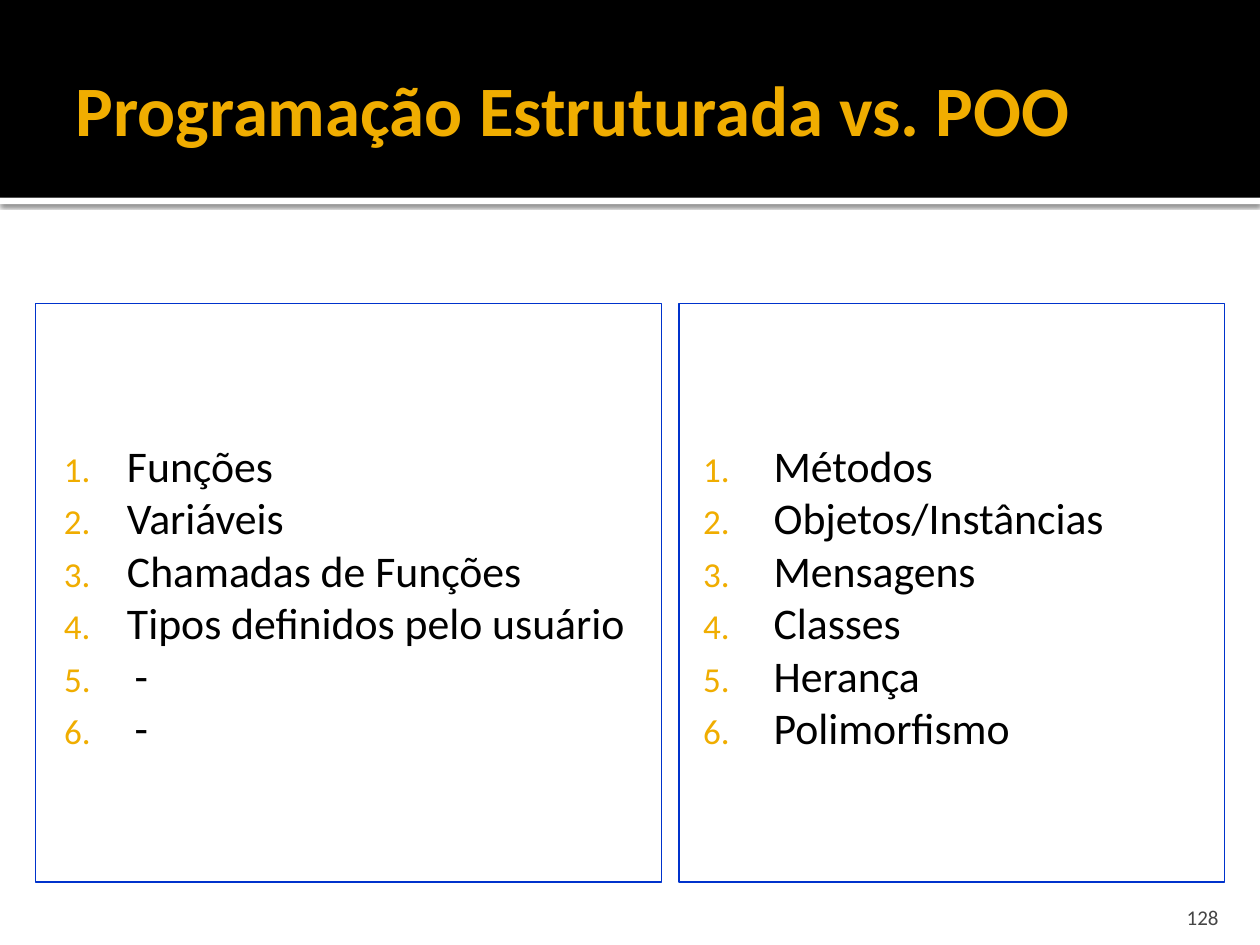
import pptx
import pptx.dml.color
import pptx.enum.shapes
import pptx.enum.text
import pptx.oxml
import pptx.oxml.ns
import pptx.util
from pptx.util import Inches

ALIGN = pptx.enum.text.PP_ALIGN
ANCHOR = pptx.enum.text.MSO_ANCHOR

THEME = {
    "font": "Calibri",
    "black": "000000", "white": "FFFFFF", "accent": "F0AD00",
    "border": "0033CC", "muted": "454545",
    "title_size": 40.5, "body_size": 25, "number_size": 12,
}

TITLE = "Programação Estruturada vs. POO"
PAGE_NUMBER = "128"

NARROW, WIDE = (0.63, 0.5), (0.69, 0.56)  # left margin, hanging indent
PANELS = [
    {"left": 0.28, "width": 4.97, "inset": 0.1, "items": [
        ("Funções", NARROW), ("Variáveis", NARROW),
        ("Chamadas de Funções", NARROW),
        ("Tipos definidos pelo usuário", NARROW),
        ("-", WIDE), ("-", WIDE)]},
    {"left": 5.39, "width": 4.33, "inset": 0.06, "items": [
        (name, WIDE) for name in (
            "Métodos", "Objetos/Instâncias", "Mensagens",
            "Classes", "Herança", "Polimorfismo")]},
]
PANEL_TOP, PANEL_HEIGHT = 2.41, 4.59
BAND_HEIGHT, STRIP_HEIGHT = 1.57, 0.05


def color(name):
    return pptx.dml.color.RGBColor.from_string(THEME[name])


def add_xml(parent, xml):
    namespaces = pptx.oxml.ns.nsdecls("a")
    parent.append(pptx.oxml.parse_xml(xml.replace(" NS", " " + namespaces, 1)))


def style_font(font, size, color_name, bold=False):
    font.name = THEME["font"]
    font.size = pptx.util.Pt(THEME[size])
    font.bold = bold
    font.color.rgb = color(color_name)


def set_frame(text_frame, anchor, insets):
    text_frame.word_wrap = True
    text_frame.auto_size = pptx.enum.text.MSO_AUTO_SIZE.NONE
    text_frame.vertical_anchor = anchor
    (text_frame.margin_left, text_frame.margin_top,
     text_frame.margin_right, text_frame.margin_bottom) = map(Inches, insets)


def add_rectangle(slide, left, top, width, height):
    shape = slide.shapes.add_shape(
        pptx.enum.shapes.MSO_SHAPE.RECTANGLE,
        *map(Inches, (left, top, width, height)))
    shape.shadow.inherit = False
    return shape


def add_header(slide):
    for top, height, fill in ((BAND_HEIGHT, STRIP_HEIGHT, "white"),
                              (0, BAND_HEIGHT, "black")):
        band = add_rectangle(slide, 0, top, 10, height)
        band.fill.solid()
        band.fill.fore_color.rgb = color(fill)
        band.line.fill.background()
        if fill == "white":
            effects = band.element.spPr.find(pptx.oxml.ns.qn("a:effectLst"))
            add_xml(effects,
                    '<a:outerShdw NS blurRad="31750" dist="10160" dir="5400000" '
                    'algn="tl" rotWithShape="0"><a:srgbClr val="000000">'
                    '<a:alpha val="60000"/></a:srgbClr></a:outerShdw>')

    title = slide.shapes.title
    title.element.getparent().append(title.element)  # in front of the band
    title.left, title.top, title.width, title.height = map(
        Inches, (0.5, 0.17, 8.62, 1.37))
    title.text_frame.text = TITLE
    set_frame(title.text_frame, ANCHOR.MIDDLE, (0.1, 0.05, 0.05, 0.05))
    paragraph = title.text_frame.paragraphs[0]
    paragraph.alignment = ALIGN.LEFT
    style_font(paragraph.runs[0].font, "title_size", "accent", bold=True)


def number_paragraph(paragraph, margin, hanging):
    properties = paragraph._p.get_or_add_pPr()
    properties.set("marL", str(Inches(margin)))
    properties.set("indent", str(-Inches(hanging)))
    add_xml(properties, f'<a:buClr NS><a:srgbClr val="{THEME["accent"]}"/></a:buClr>')
    add_xml(properties, '<a:buSzPct NS val="80000"/>')
    add_xml(properties, f'<a:buFont NS typeface="{THEME["font"]}"/>')
    add_xml(properties, '<a:buAutoNum NS type="arabicPeriod"/>')


def add_panel(slide, panel):
    shape = add_rectangle(
        slide, panel["left"], PANEL_TOP, panel["width"], PANEL_HEIGHT)
    shape.fill.background()
    shape.line.color.rgb = color("border")
    shape.line.width = pptx.util.Pt(0.75)
    text_frame = shape.text_frame
    set_frame(text_frame, ANCHOR.MIDDLE, (panel["inset"], 0.1, 0.1, 0.05))
    text_frame.text = "\n".join(name for name, _ in panel["items"])
    for paragraph, (_, indent) in zip(text_frame.paragraphs, panel["items"]):
        paragraph.alignment = ALIGN.LEFT
        number_paragraph(paragraph, *indent)
        style_font(paragraph.runs[0].font, "body_size", "black")


def add_page_number(slide):
    box = slide.shapes.add_textbox(*map(Inches, (8.97, 7.08, 0.8, 0.3)))
    set_frame(box.text_frame, ANCHOR.BOTTOM, (0.1, 0.05, 0.1, 0))
    box.text_frame.text = PAGE_NUMBER
    paragraph = box.text_frame.paragraphs[0]
    paragraph.alignment = ALIGN.RIGHT
    style_font(paragraph.runs[0].font, "number_size", "muted")


def main():
    presentation = pptx.Presentation()
    presentation.slide_width, presentation.slide_height = Inches(10), Inches(7.5)
    slide = presentation.slides.add_slide(presentation.slide_layouts[5])
    slide.background.fill.solid()
    slide.background.fill.fore_color.rgb = color("white")
    add_header(slide)
    for panel in PANELS:
        add_panel(slide, panel)
    add_page_number(slide)
    presentation.save("out.pptx")


if __name__ == "__main__":
    main()
